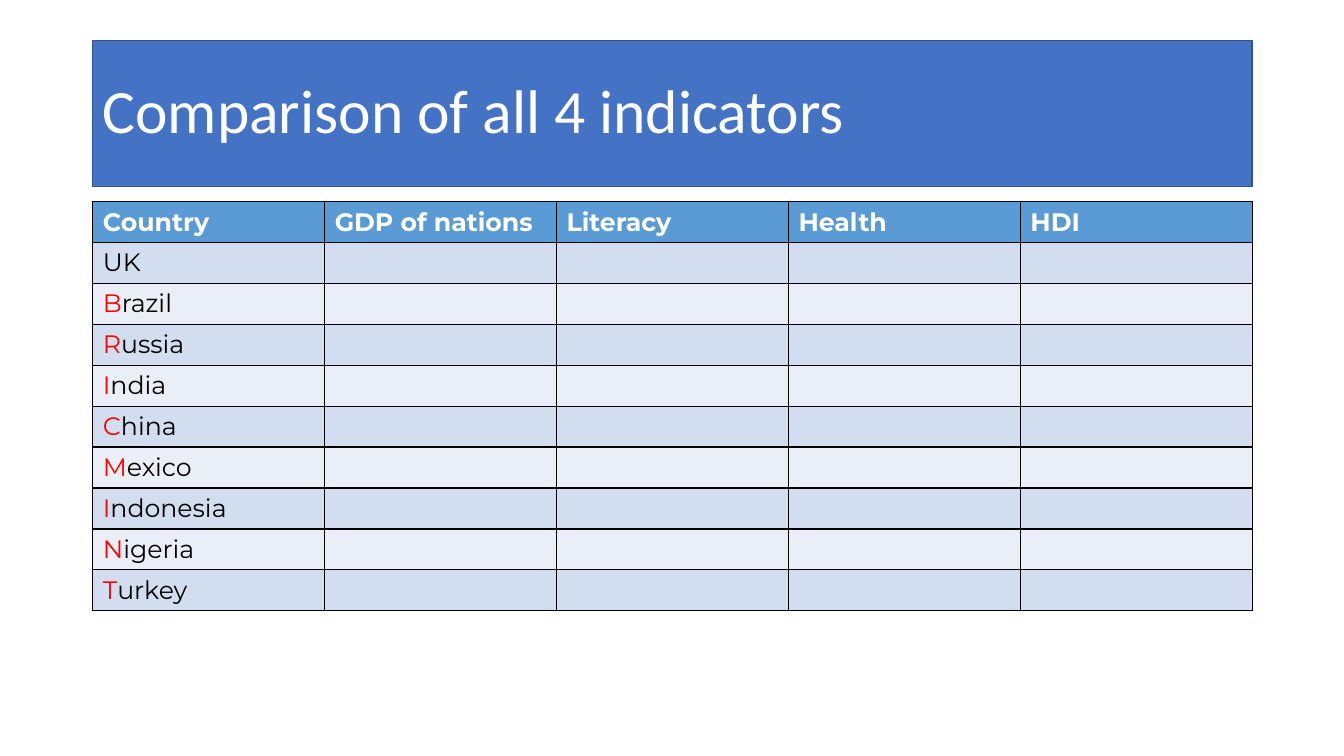
from lxml.etree import SubElement
from pptx import Presentation
from pptx.dml.color import RGBColor
from pptx.enum.shapes import MSO_SHAPE
from pptx.enum.text import MSO_ANCHOR, PP_ALIGN
from pptx.oxml.ns import qn
from pptx.util import Inches, Pt

WHITE = RGBColor(0xFF, 0xFF, 0xFF)
BLACK = RGBColor(0x00, 0x00, 0x00)
RED = RGBColor(0xFF, 0x00, 0x00)
BLUE = RGBColor(0x44, 0x72, 0xC4)
NAVY = RGBColor(0x32, 0x54, 0x91)
SKY = RGBColor(0x5B, 0x9B, 0xD5)
BANDS = [RGBColor(0xD2, 0xDE, 0xEF), RGBColor(0xEA, 0xEF, 0xF7)]

TITLE = {"name": "Calibri", "size": Pt(44), "bold": False}
HEAD = {"name": "Montserrat", "size": Pt(18), "bold": True}
BODY = {"name": "Montserrat", "size": Pt(18), "bold": False}

HEADS = ["Country", "GDP of nations", "Literacy", "Health", "HDI"]
LANDS = ["UK", "Brazil", "Russia", "India", "China", "Mexico",
         "Indonesia", "Nigeria", "Turkey"]


def add_run(para, text, form, color):
    run = para.add_run()
    run.text = text
    for key, value in form.items():
        setattr(run.font, key, value)
    run.font.color.rgb = color


def add_title(slide, box, text):
    shape = slide.shapes.add_shape(MSO_SHAPE.RECTANGLE, *box)
    shape.shadow.inherit = False
    shape.fill.solid()
    shape.fill.fore_color.rgb = BLUE
    shape.line.color.rgb = NAVY
    shape.line.width = Pt(1)
    frame = shape.text_frame
    frame.word_wrap = True
    frame.vertical_anchor = MSO_ANCHOR.MIDDLE
    para = frame.paragraphs[0]
    para.alignment = PP_ALIGN.LEFT
    para.line_spacing = 0.9
    add_run(para, text, TITLE, WHITE)


def style_cell(cell, color):
    props = cell._tc.get_or_add_tcPr()
    for side in ("a:lnL", "a:lnR", "a:lnT", "a:lnB"):
        line = SubElement(props, qn(side), w=str(Pt(1)))
        fill = SubElement(line, qn("a:solidFill"))
        SubElement(fill, qn("a:srgbClr"), val=str(BLACK))
    cell.fill.solid()
    cell.fill.fore_color.rgb = color


def add_grid(slide, box, heads, lands):
    rows, cols = len(lands) + 1, len(heads)
    table = slide.shapes.add_table(rows, cols, *box).table
    for col in table.columns:
        col.width = box[2] // cols
    for row in table.rows:
        row.height = box[3] // rows
    for r in range(rows):
        for c in range(cols):
            cell = table.cell(r, c)
            style_cell(cell, BANDS[(r - 1) % 2] if r else SKY)
            cell.text_frame.paragraphs[0].font.size = Pt(18)
    for c, head in enumerate(heads):
        add_run(table.cell(0, c).text_frame.paragraphs[0], head, HEAD, WHITE)
    for r, land in enumerate(lands, 1):
        para = table.cell(r, 0).text_frame.paragraphs[0]
        if land == "UK":
            add_run(para, land, BODY, BLACK)
        else:
            add_run(para, land[0], BODY, RED)
            add_run(para, land[1:], BODY, BLACK)


def main():
    deck = Presentation()
    deck.slide_width, deck.slide_height = Inches(13.33), Inches(7.5)
    slide = deck.slides.add_slide(deck.slide_layouts[6])
    left, width = Inches(0.92), Inches(11.5)
    add_title(slide, (left, Inches(0.4), width, Inches(1.45)),
              "Comparison of all 4 indicators")
    add_grid(slide, (left, Inches(2), width, Inches(4.06)), HEADS, LANDS)
    deck.save("out.pptx")


if __name__ == "__main__":
    main()
